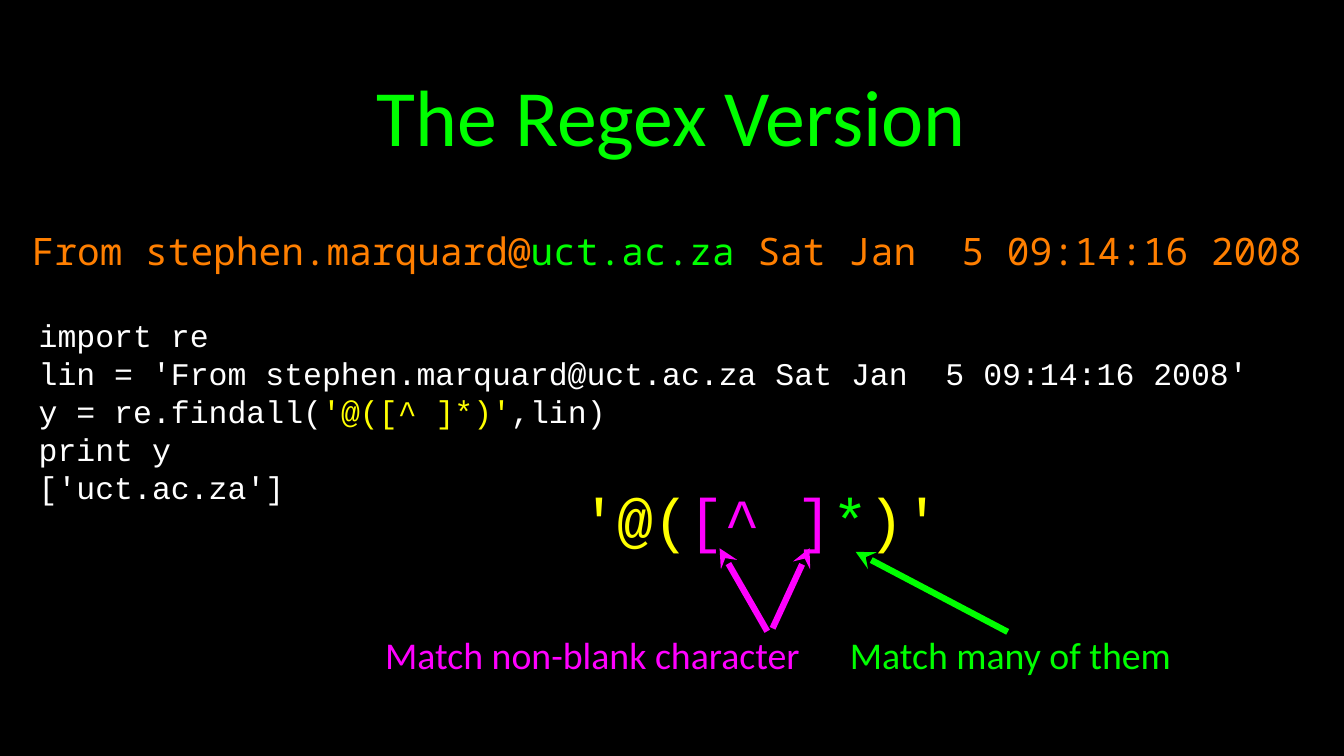
import pptx
import pptx.dml.color
import pptx.enum.shapes
import pptx.enum.text
import pptx.oxml
import pptx.oxml.ns
import pptx.util
from dataclasses import dataclass

Cm = pptx.util.Cm
Pt = pptx.util.Pt
Align = pptx.enum.text.PP_ALIGN


@dataclass(frozen=True)
class Theme:
    background: str = "000000"
    plain: str = "FFFFFF"
    green: str = "00FF00"
    orange: str = "FF7F00"
    yellow: str = "FFFF00"
    magenta: str = "FF00FF"
    text_font: str = "Calibri"
    code_font: str = "Courier New"
    mail_font: str = "Noto Sans Mono"
    title_size: int = 76
    pattern_size: int = 57
    label_size: int = 36
    code_size: int = 30
    code_pitch: int = 36
    arrow_width: int = 6


class SlideBuilder:
    """Holds the theme and the slide being built."""

    def __init__(self, slide, theme):
        self.slide = slide
        self.theme = theme
        fill = slide.background.fill
        fill.solid()
        fill.fore_color.rgb = self.color(theme.background)

    def color(self, value):
        return pptx.dml.color.RGBColor.from_string(value)

    def place(self, shape, box):
        for name, value in zip(("left", "top", "width", "height"), box):
            setattr(shape, name, Cm(value))

    def set_lines(self, shape, lines, font, size, align, margin=0, wrap=True, pitch=None):
        """Each line is a list of (text, colour) pieces."""
        frame = shape.text_frame
        sizes = pptx.enum.text.MSO_AUTO_SIZE
        frame_format = {
            "word_wrap": wrap,
            "auto_size": sizes.NONE if wrap else sizes.SHAPE_TO_FIT_TEXT,
            "vertical_anchor": pptx.enum.text.MSO_ANCHOR.MIDDLE,
        }
        for side in ("left", "top", "right", "bottom"):
            frame_format[f"margin_{side}"] = Cm(margin)
        for name, value in frame_format.items():
            setattr(frame, name, value)
        for index, pieces in enumerate(lines):
            paragraph = frame.add_paragraph() if index else frame.paragraphs[0]
            paragraph.alignment = align
            if pitch:
                paragraph.line_spacing = Pt(pitch)
            for text, color in pieces:
                run = paragraph.add_run()
                run.text = text
                for name, value in {"name": font, "size": Pt(size), "bold": False}.items():
                    setattr(run.font, name, value)
                run.font.color.rgb = self.color(color)

    def title(self, text, box):
        shape = self.slide.shapes.title
        self.place(shape, box)
        self.set_lines(shape, [[(text, self.theme.green)]], self.theme.text_font,
                       self.theme.title_size, Align.CENTER, margin=0.1)

    def text(self, lines, box, font, size, align=Align.LEFT, **options):
        shape = self.slide.shapes.add_textbox(*map(Cm, box))
        self.set_lines(shape, lines, font, size, align, **options)

    def label(self, text, color, box):
        self.text([[(text, color)]], box, self.theme.text_font,
                  self.theme.label_size, Align.CENTER, wrap=False)

    def arrow(self, tip, tail, color):
        """Draws a line whose stealth head is at the tip."""
        connector = self.slide.shapes.add_connector(
            pptx.enum.shapes.MSO_CONNECTOR.STRAIGHT, *map(Cm, tip + tail))
        connector.line.width = Pt(self.theme.arrow_width)
        connector.line.color.rgb = self.color(color)
        namespace = pptx.oxml.ns.nsdecls("a")
        connector.get_or_add_ln().append(
            pptx.oxml.parse_xml(f'<a:headEnd {namespace} type="stealth"/>'))
        connector.element.spPr.append(
            pptx.oxml.parse_xml(f"<a:effectLst {namespace}/>"))


def main():
    theme = Theme()
    presentation = pptx.Presentation()
    presentation.slide_width = Cm(45.16)
    presentation.slide_height = Cm(25.4)
    title_only = presentation.slide_layouts[5]
    builder = SlideBuilder(presentation.slides.add_slide(title_only), theme)

    builder.title("The Regex Version", (3.2, 0.66, 38.71, 6.38))

    # Mail header with the host picked out
    builder.text(
        [[("From stephen.marquard@", theme.orange), ("uct.ac.za", theme.green),
          (" Sat Jan  5 09:14:16 2008", theme.orange)]],
        (1.07, 7.47, 43, 1.88), theme.mail_font, theme.label_size, wrap=False)

    # Program and its output
    builder.text(
        [[("import re", theme.plain)],
         [("lin = 'From stephen.marquard@uct.ac.za Sat Jan  5 09:14:16 2008'", theme.plain)],
         [("y = re.findall(", theme.plain), ("'@([^ ]*)'", theme.yellow),
          (",lin)", theme.plain)],
         [("print y", theme.plain)],
         [("['uct.ac.za']", theme.plain)]],
        (1.3, 10.67, 43.79, 6.27), theme.code_font, theme.code_size,
        pitch=theme.code_pitch)

    # Enlarged pattern
    builder.text(
        [[("'@(", theme.yellow), ("[^ ]", theme.magenta), ("*", theme.green),
          (")'", theme.yellow)]],
        (19.53, 16.18, 12.19, 2.44), theme.code_font, theme.pattern_size, wrap=False)

    # Explanations and their arrows
    builder.label("Match non-blank character", theme.magenta, (12.85, 21.11, 14.12, 1.73))
    for tip, tail, color in (
        ((24.18, 18.42), (25.78, 21.21), theme.magenta),
        ((28.75, 18.54), (33.86, 21.23), theme.green),
        ((27.2, 18.42), (25.96, 21.11), theme.magenta),
    ):
        builder.arrow(tip, tail, color)
    builder.label("Match many of them", theme.green, (28.52, 21.11, 10.87, 1.73))

    presentation.save("out.pptx")


if __name__ == "__main__":
    main()
